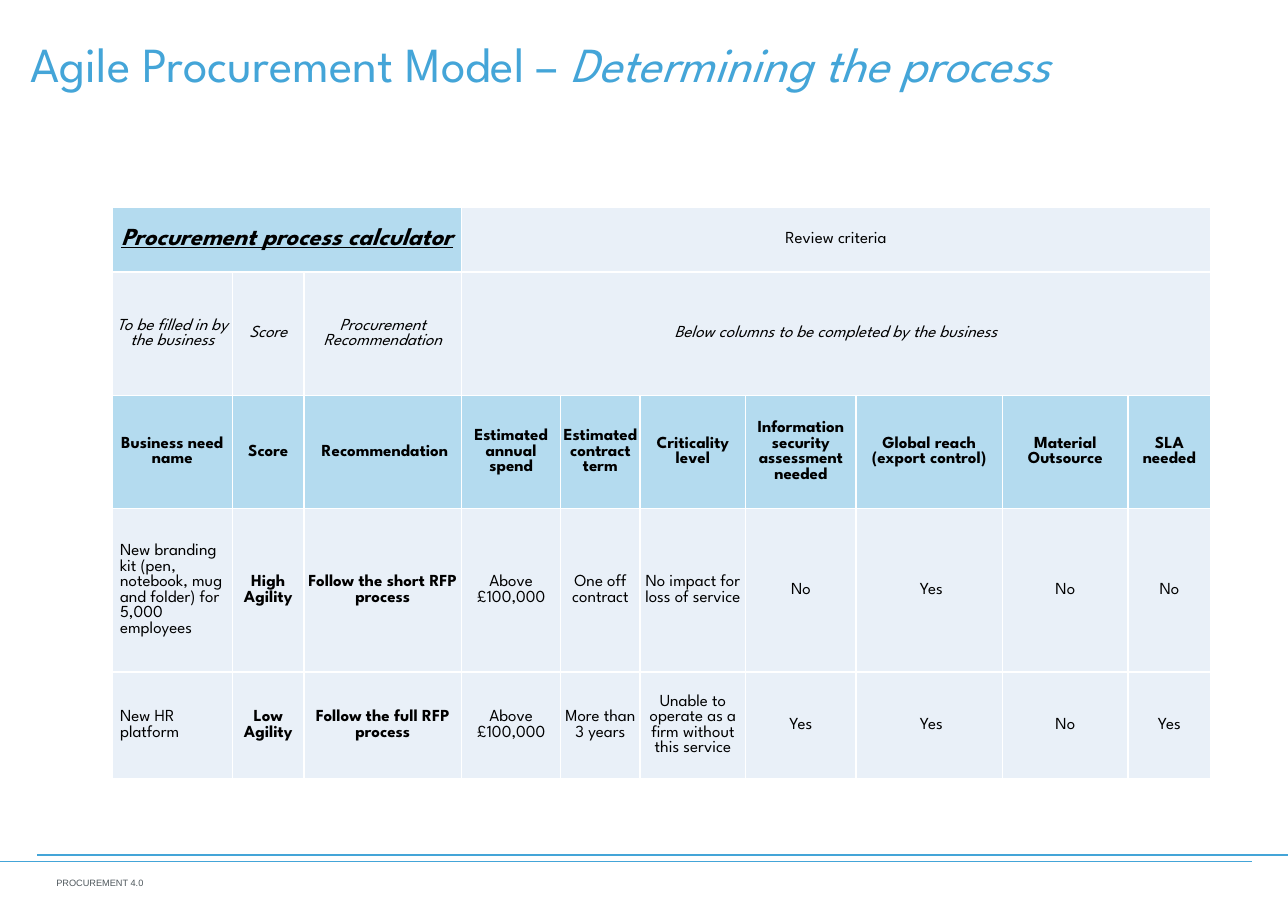
"""Build the agile procurement slide with its process calculator table."""
from lxml import etree
from pptx import Presentation
from pptx.dml.color import RGBColor
from pptx.enum import shapes, text
from pptx.oxml import ns
from pptx.util import Emu, Pt

PX = 9144
BLUE = RGBColor(0x44, 0xA5, 0xD8)
SKY = RGBColor(0xB4, 0xDB, 0xEF)
PALE = RGBColor(0xE9, 0xF0, 0xF8)
GREY = RGBColor(0x4E, 0x57, 0x5C)
WHITE = RGBColor(0xFF, 0xFF, 0xFF)
BLACK = RGBColor(0, 0, 0)
LEFT, MID, RIGHT = text.PP_ALIGN.LEFT, text.PP_ALIGN.CENTER, text.PP_ALIGN.RIGHT
CENTRE, FOOT = text.MSO_ANCHOR.MIDDLE, text.MSO_ANCHOR.BOTTOM

COLS = [109, 65, 143, 90, 72, 96, 100, 133, 114, 75]
ROWS = [59, 112, 103, 148, 97]
HEADS = ["Procurement process calculator", "", "", "Review criteria"]
HINTS = ["To be filled in by the business", "Score", "Procurement Recommendation",
         "Below columns to be completed by the business"]
NAMES = ["Business need name", "Score", " Recommendation", "Estimated annual spend",
         "Estimated contract term", "Criticality level",
         "Information security assessment needed", "Global reach (export control)",
         "Material Outsource", "SLA needed"]
NEEDS = [
    ["New branding kit (pen, notebook, mug and folder) for 5,000 employees",
     "High Agility", "Follow the short RFP process", "Above £100,000", "One off contract",
     "No impact for loss of service", "No", " Yes", "No", "No"],
    ["New HR platform", "Low Agility", "Follow the full RFP process", "Above £100,000",
     "More than 3 years", "Unable to operate as a firm without this service",
     "Yes", " Yes", "No", "Yes"],
]


def px(n):
    """Turn whole px into EMU."""
    return Emu(n * PX)


class Page:
    """Hold the style and the current slide."""

    def __init__(self, deck, font="League Spartan"):
        """Add a blank slide to the deck."""
        self.slide = deck.slides.add_slide(deck.slide_layouts[6])
        self.font = font

    def run(self, para, words, size, color, style="", font=None):
        """Add one run; style letters are b, i and u."""
        run = para.add_run()
        run.text = words
        face = run.font
        face.name, face.size = font or self.font, Pt(size)
        face.color.rgb = color
        face.bold, face.italic, face.underline = (key in style for key in "biu")

    def box(self, area, pads, anchor, align):
        """Add a text box and return its paragraph."""
        frame = self.slide.shapes.add_textbox(*map(px, area)).text_frame
        frame.word_wrap = True
        frame.vertical_anchor = anchor
        (frame.margin_left, frame.margin_top,
         frame.margin_right, frame.margin_bottom) = map(px, pads)
        para = frame.paragraphs[0]
        para.alignment = align
        return para

    def rule(self, left, right, y):
        """Add a level line."""
        line = self.slide.shapes.add_connector(
            shapes.MSO_CONNECTOR.STRAIGHT, px(left), px(y), px(right), px(y))
        line.line.color.rgb = BLUE
        line.line.width = Pt(1)
        etree.SubElement(line._element.spPr, ns.qn("a:effectLst"))

    def grid(self, left, top, cols, rows):
        """Add an empty table of the given widths and heights."""
        table = self.slide.shapes.add_table(
            len(rows), len(cols), px(left), px(top), px(sum(cols)), px(sum(rows))).table
        table.first_row = table.horz_banding = False
        for col, wide in zip(table.columns, cols):
            col.width = px(wide)
        for row, high in zip(table.rows, rows):
            row.height = px(high)
        return table

    def edge(self, cell):
        """Draw white borders round a cell."""
        props = cell._tc.get_or_add_tcPr()
        for at, side in enumerate(("lnL", "lnR", "lnT", "lnB")):
            line = etree.Element(ns.qn("a:" + side), w=str(Pt(1)))
            fill = etree.SubElement(line, ns.qn("a:solidFill"))
            etree.SubElement(fill, ns.qn("a:srgbClr"), val=str(WHITE))
            props.insert(at, line)

    def cell(self, cell, words, fill, size=11, style="", align=MID):
        """Fill one table cell."""
        cell.fill.solid()
        cell.fill.fore_color.rgb = fill
        cell.margin_top = cell.margin_right = cell.margin_bottom = 0
        cell.margin_left = px(7 if align == LEFT else 0)
        cell.vertical_anchor = CENTRE
        self.edge(cell)
        para = cell.text_frame.paragraphs[0]
        para.alignment = align
        if words:
            self.run(para, words, size, BLACK, style)


def main():
    """Build and save the slide."""
    deck = Presentation()
    deck.slide_width, deck.slide_height = px(1169), px(827)
    page = Page(deck)

    foot = page.box((-121, 784, 262, 35), (11, 6, 11, 6), CENTRE, RIGHT)
    page.run(foot, "PROCUREMENT 4.0", 6, GREY, font="Arial")
    page.rule(0, 1136, 782)
    page.rule(34, 1169, 776)

    title = page.box((18, 24, 1153, 60), (10, 5, 10, 0), FOOT, LEFT)
    page.run(title, "Agile Procurement Model – ", 32, BLUE)
    page.run(title, "Determining the process", 32, BLUE, "i")

    table = page.grid(102, 188, COLS, ROWS)
    last = len(COLS) - 1
    for r, row in enumerate([HEADS, HINTS, NAMES, *NEEDS]):
        for c in range(len(COLS)):
            words = row[c] if c < len(row) else ""
            fill, size, style, align = PALE, 11, "", MID
            if r == 0 and c < 3:
                fill, size, style = SKY, 16, "biu"
            elif r == 1:
                style = "i"
            elif r == 2:
                fill, style = SKY, "b"
            elif r > 2 and c == 0:
                align = LEFT
            elif r > 2 and c < 3:
                style = "b"
            page.cell(table.cell(r, c), words, fill, size, style, align)
    for r, start, end in ((0, 0, 2), (0, 3, last), (1, 3, last)):
        table.cell(r, start).merge(table.cell(r, end))

    deck.save("out.pptx")


if __name__ == "__main__":
    main()
